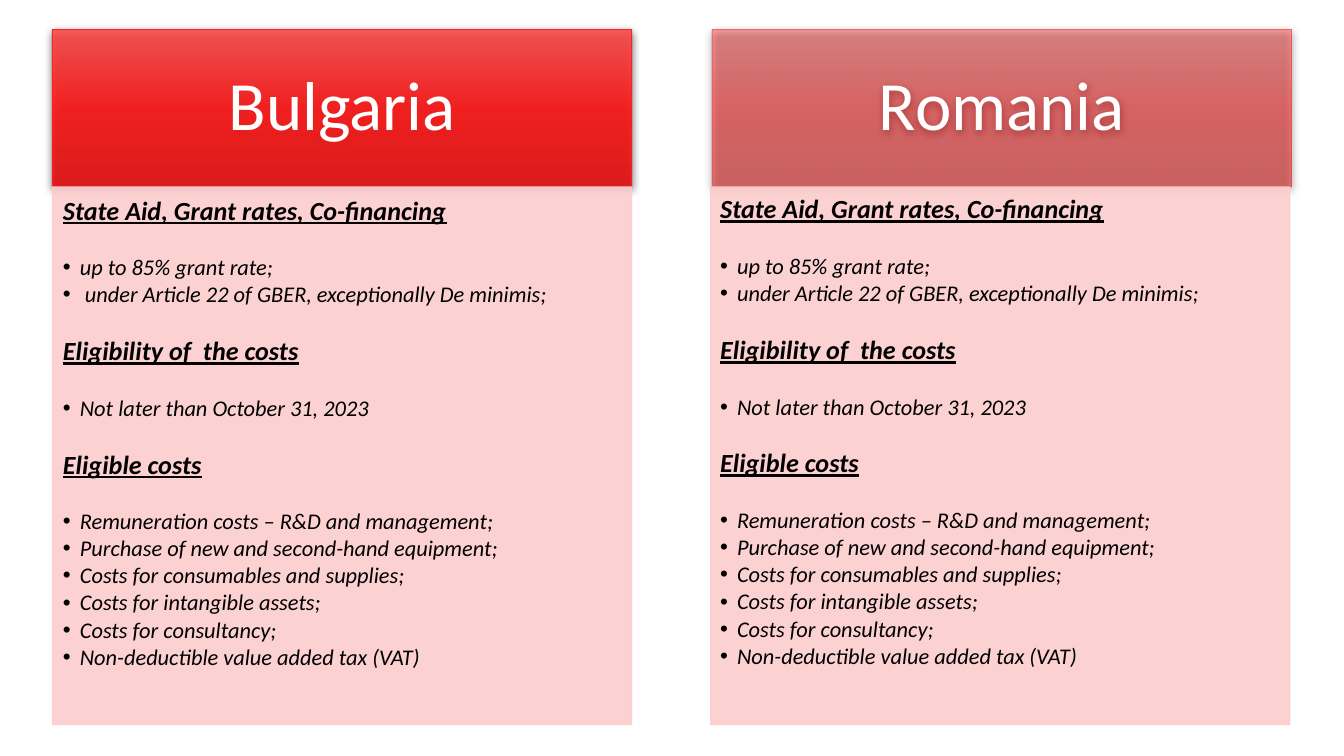
from lxml import etree
from pptx import Presentation
from pptx.dml.color import RGBColor
from pptx.enum.shapes import MSO_SHAPE
from pptx.enum.text import MSO_ANCHOR, PP_ALIGN
from pptx.oxml.ns import qn
from pptx.util import Cm, Pt

RECT = MSO_SHAPE.RECTANGLE
TOP, MIDDLE = MSO_ANCHOR.TOP, MSO_ANCHOR.MIDDLE
LEFT, CENTER = PP_ALIGN.LEFT, PP_ALIGN.CENTER

WIDTH, HEAD, BODY = 10.95, 2.97, 10.16
Y = 0.56
RED = [(0, "FC5050"), (50, "FF1919"), (100, "E51414")]
PINK = "FCCDCD"


def rgb(code):
    return RGBColor.from_string(code)


def add(parent, tag, **attrs):
    node = etree.SubElement(parent, qn(tag))
    for key, value in attrs.items():
        node.set(key, str(value))
    return node


def tint(parent, code, alpha):
    """Add a colour with an opacity in percent."""
    node = add(parent, "a:srgbClr", val=code)
    add(node, "a:alpha", val=alpha * 1000)


class Deck:
    font = "Calibri"

    def __init__(self):
        self.prs = Presentation()
        self.prs.slide_width, self.prs.slide_height = Cm(25.4), Cm(14.28)
        self.slide = self.prs.slides.add_slide(self.prs.slide_layouts[6])

    def box(self, x, y, height, line, alpha, pads, anchor):
        shape = self.slide.shapes.add_shape(
            RECT, Cm(x), Cm(y), Cm(WIDTH), Cm(height))
        shape.shadow.inherit = False
        shape.line.color.rgb = rgb(line)
        shape.line.width = Pt(0.5)
        clr = shape.line._ln.find(".//" + qn("a:srgbClr"))
        add(clr, "a:alpha", val=alpha * 1000)
        frame = shape.text_frame
        frame.word_wrap = True
        frame.vertical_anchor = anchor
        (frame.margin_left, frame.margin_top,
         frame.margin_right, frame.margin_bottom) = map(Cm, pads)
        return shape

    def style(self, para, size, color, align, after):
        para.alignment = align
        para.line_spacing = 0.9
        para.space_after = Pt(after)
        font = para.runs[0].font
        font.name, font.size = self.font, Pt(size)
        font.color.rgb = rgb(color)
        return font

    def title(self, x, text, alpha):
        shape = self.box(x, Y, HEAD, "F82020", alpha,
                         (0.74, 0.41, 0.74, 0.41), MIDDLE)
        shape.fill.gradient()
        shape.fill.gradient_angle = 270
        props = shape._element.spPr
        stops = props.find(".//" + qn("a:gsLst"))
        for old in list(stops):
            stops.remove(old)
        for pos, code in RED:
            tint(add(stops, "a:gs", pos=pos * 1000), code, alpha)
        glow = add(props.find(qn("a:effectLst")), "a:outerShdw",
                   blurRad=Pt(4.5), dist=Pt(1.5), dir=5400000, rotWithShape=0)
        tint(glow, "000000", 63)
        para = shape.text_frame.paragraphs[0]
        para.text = text
        self.style(para, 37, "FFFFFF", CENTER, 0)

    def body(self, x, parts, pads):
        shape = self.box(x, Y + HEAD, BODY, PINK, 90, pads, TOP)
        shape.fill.solid()
        shape.fill.fore_color.rgb = rgb(PINK)
        clr = shape._element.spPr.find(qn("a:solidFill"))[0]
        add(clr, "a:alpha", val=90000)
        frame = shape.text_frame
        rows = [(text, i == 0) for part in parts for i, text in enumerate(part)]
        for i, (text, head) in enumerate(rows):
            para = frame.add_paragraph() if i else frame.paragraphs[0]
            para.text = text
            font = self.style(para, 14 if head else 12, "000000", LEFT,
                              16.4 if head else 1.55)
            font.italic = True
            font.bold = font.underline = head
            if head and i:
                para.space_before = Pt(14.7)
            if not head:
                props = para._p.get_or_add_pPr()
                props.set("marL", str(Cm(0.32)))
                props.set("indent", str(Cm(-0.32)))
                add(props, "a:buFont", typeface="Arial")
                add(props, "a:buChar", char="•")


def topics(lead=""):
    return [
        ["State Aid, Grant rates, Co-financing",
         "up to 85% grant rate;",
         lead + "under Article 22 of GBER, exceptionally De minimis;"],
        ["Eligibility of  the costs",
         "Not later than October 31, 2023"],
        ["Eligible costs",
         "Remuneration costs – R&D and management;",
         "Purchase of new and second-hand equipment;",
         "Costs for consumables and supplies;",
         "Costs for intangible assets;",
         "Costs for consultancy;",
         "Non-deductible value added tax (VAT)"],
    ]


def main():
    deck = Deck()
    deck.title(0.99, "Bulgaria", 90)
    deck.body(0.99, topics(" "), (0.2, 0.2, 0.28, 0.3))
    deck.title(13.46, "Romania", 50)
    deck.body(13.43, topics(), (0.18, 0.18, 0.23, 0.25))
    deck.prs.save("out.pptx")


if __name__ == "__main__":
    main()
